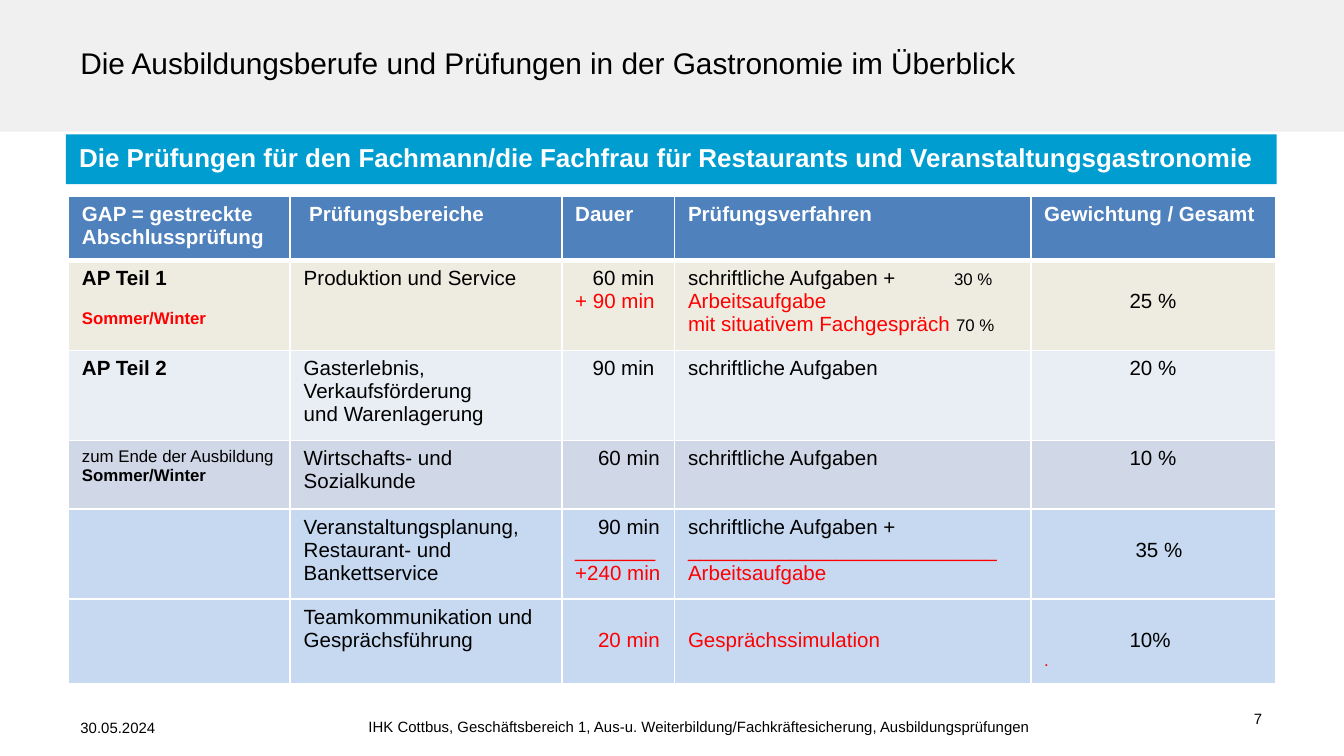
"""Build the slide on the exams for restaurant and event catering specialists."""
from dataclasses import dataclass

from lxml.etree import SubElement
from pptx import Presentation
from pptx.dml.color import RGBColor
from pptx.enum.shapes import MSO_SHAPE
from pptx.enum.text import MSO_ANCHOR, PP_ALIGN
from pptx.oxml.ns import qn
from pptx.util import Inches, Pt

COLORS = {
    "black": "000000", "white": "FFFFFF", "red": "FF0000",
    "title_band": "F0F0F0", "banner": "009DD1", "header": "4F81BD",
    "part_one": "EEECE1", "part_two": "E9EDF4", "social": "D0D8E8",
    "practice": "C6D9F1",
}
FONT = "Arial"
LINE_HEIGHT = 0.17
COLUMN_WIDTHS = [1.65, 2.02, 0.84, 2.65, 1.82]
ROW_HEIGHTS = [0.48, 0.67, 0.67, 0.51, 0.67, 0.63]
ROW_FILLS = ["header", "part_one", "part_two", "social", "practice", "practice"]
LOWERED_CELLS = {(1, 4), (4, 4), (5, 2), (5, 3), (5, 4)}


@dataclass
class Line:
    """One paragraph: (text, style words) runs and its layout."""
    runs: list
    indent: float = 0
    before: float = 0
    centered: bool = False
    tab: float = 0


def line(text, style="", **layout):
    """Return a paragraph with a single run."""
    return Line([(text, style)], **layout)


def share(text):
    """Return a centred weighting."""
    return line(text, centered=True)


WRITTEN = "schriftliche Aufgaben"
EXAM_ROWS = [
    [
        [line("GAP = gestreckte", "white bold"), line("Abschlussprüfung", "white bold")],
        [line("Prüfungsbereiche", "white bold", indent=0.04)],
        [line("Dauer", "white bold")],
        [line("Prüfungsverfahren", "white bold")],
        [line("Gewichtung / Gesamt", "white bold")],
    ],
    [
        [line("AP Teil 1", "bold"), line("Sommer/Winter", "red bold small", before=10)],
        [line("Produktion und Service")],
        [line("60 min", indent=0.13), line("+ 90 min", "red")],
        [Line([(WRITTEN + " +\t", ""), ("30 %", "small")], tab=1.98),
         line("Arbeitsaufgabe", "red"),
         Line([("mit situativem Fachgespräch ", "red"), ("70 %", "small")])],
        [share("25 %")],
    ],
    [
        [line("AP Teil 2", "bold")],
        [line("Gasterlebnis, Verkaufsförderung"), line("und Warenlagerung")],
        [line("90 min", indent=0.13)],
        [line(WRITTEN)],
        [share("20 %")],
    ],
    [
        [Line([("zum Ende der Ausbildung", "small"), (" Sommer/Winter", "small bold")])],
        [line("Wirtschafts- und Sozialkunde")],
        [line("60 min", indent=0.17)],
        [line(WRITTEN)],
        [share("10 %")],
    ],
    [
        [],
        [line("Veranstaltungsplanung,"), line("Restaurant- und"), line("Bankettservice")],
        [line("90 min", indent=0.17), line("_" * 7, "red"), line("+240 min", "red")],
        [line(WRITTEN + " +"), line("_" * 27, "red"), line("Arbeitsaufgabe", "red")],
        [line("35 %", indent=0.68)],
    ],
    [
        [],
        [line("Teamkommunikation und"), line("Gesprächsführung")],
        [line("20 min", "red", indent=0.17)],
        [line("Gesprächssimulation", "red")],
        [share("10% "), line(".", "red small")],
    ],
]


def rgb(name):
    """Return the named colour."""
    return RGBColor.from_string(COLORS[name])


def format_font(font, size, color="black", bold=False):
    """Apply typeface, size, colour and weight."""
    font.name, font.size, font.bold = FONT, Pt(size), bold
    font.color.rgb = rgb(color)


def add_bar(slide, left, top, width, height, color):
    """Add a filled rectangle without outline."""
    bar = slide.shapes.add_shape(
        MSO_SHAPE.RECTANGLE, Inches(left), Inches(top), Inches(width), Inches(height))
    bar.shadow.inherit = False
    bar.fill.solid()
    bar.fill.fore_color.rgb = rgb(color)
    bar.line.fill.background()
    return bar


def write_label(label, text, size, color="black", bold=False,
                align=PP_ALIGN.LEFT, anchor=MSO_ANCHOR.MIDDLE, margin_bottom=0.05):
    """Fill a shape with one formatted paragraph."""
    frame = label.text_frame
    frame.word_wrap = True
    frame.vertical_anchor = anchor
    frame.margin_bottom = Inches(margin_bottom)
    frame.text = text
    paragraph = frame.paragraphs[0]
    paragraph.alignment = align
    format_font(paragraph.runs[0].font, size, color, bold)


def add_label(slide, left, top, width, height, text, size, **layout):
    """Add a text box with one paragraph."""
    label = slide.shapes.add_textbox(
        Inches(left), Inches(top), Inches(width), Inches(height))
    write_label(label, text, size, **layout)


def write_line(paragraph, content):
    """Write one table paragraph with its indent, tab stop and runs."""
    properties = paragraph._p.get_or_add_pPr()
    if content.indent:
        properties.set("marL", str(Inches(content.indent)))
        properties.set("indent", "0")
    if content.before:
        paragraph.space_before = Pt(content.before)
    if content.tab:
        stops = SubElement(properties, qn("a:tabLst"))
        SubElement(stops, qn("a:tab"), pos=str(Inches(content.tab)), algn="l")
    if content.centered:
        paragraph.alignment = PP_ALIGN.CENTER
    for text, style in content.runs:
        words = style.split()
        color = next((word for word in words if word in COLORS), "black")
        run = paragraph.add_run()
        run.text = text
        format_font(run.font, 9 if "small" in words else 11, color, "bold" in words)


def add_borders(cell, top, bottom):
    """Draw white borders with the given top and bottom widths."""
    properties = cell._tc.get_or_add_tcPr()
    for side, width in (("L", 1), ("R", 1), ("T", top), ("B", bottom)):
        border = SubElement(properties, qn(f"a:ln{side}"), w=str(Pt(width)))
        fill = SubElement(border, qn("a:solidFill"))
        SubElement(fill, qn("a:srgbClr"), val=COLORS["white"])


def add_exam_table(slide):
    """Add the table of exam parts, durations and weightings."""
    table = slide.shapes.add_table(
        len(ROW_HEIGHTS), len(COLUMN_WIDTHS), Inches(0.51), Inches(1.46),
        Inches(sum(COLUMN_WIDTHS)), Inches(sum(ROW_HEIGHTS))).table
    for column, width in zip(table.columns, COLUMN_WIDTHS):
        column.width = Inches(width)
    for row_index, exam_row in enumerate(EXAM_ROWS):
        table.rows[row_index].height = Inches(ROW_HEIGHTS[row_index])
        for column_index, lines in enumerate(exam_row):
            cell = table.cell(row_index, column_index)
            add_borders(cell, 3 if row_index == 1 else 1, 3 if row_index == 0 else 1)
            cell.fill.solid()
            cell.fill.fore_color.rgb = rgb(ROW_FILLS[row_index])
            if (row_index, column_index) in LOWERED_CELLS:
                cell.margin_top = Inches(0.05 + LINE_HEIGHT)
            frame = cell.text_frame
            for index, content in enumerate(lines):
                paragraph = frame.add_paragraph() if index else frame.paragraphs[0]
                write_line(paragraph, content)


def main():
    """Build and save the slide."""
    presentation = Presentation()
    presentation.slide_width = Inches(10)
    presentation.slide_height = presentation.slide_width * 9 // 16
    slide = presentation.slides.add_slide(presentation.slide_layouts[6])
    add_bar(slide, 0, 0, 10, 0.98, "title_band")
    add_label(slide, 0.5, 5.19, 2.33, 0.3, "30.05.2024", 8,
              anchor=MSO_ANCHOR.BOTTOM, margin_bottom=0.01)
    add_label(slide, 7.16, 5.2, 2.33, 0.3, "7", 8, align=PP_ALIGN.RIGHT)
    banner = add_bar(slide, 0.49, 1, 9.01, 0.37, "banner")
    write_label(banner, "Die Prüfungen für den Fachmann/die Fachfrau für Restaurants "
                "und Veranstaltungsgastronomie", 13.9, "white", True, margin_bottom=0.08)
    add_label(slide, 0.5, 0.18, 7.66, 0.57,
              "Die Ausbildungsberufe und Prüfungen in der Gastronomie im Überblick", 16)
    add_label(slide, 1.86, 5.2, 6.69, 0.3,
              "IHK Cottbus, Geschäftsbereich 1, Aus-u. Weiterbildung/Fachkräftesicherung, "
              "Ausbildungsprüfungen", 8, align=PP_ALIGN.CENTER,
              anchor=MSO_ANCHOR.BOTTOM, margin_bottom=0.03)
    add_exam_table(slide)
    presentation.save("out.pptx")


if __name__ == "__main__":
    main()
